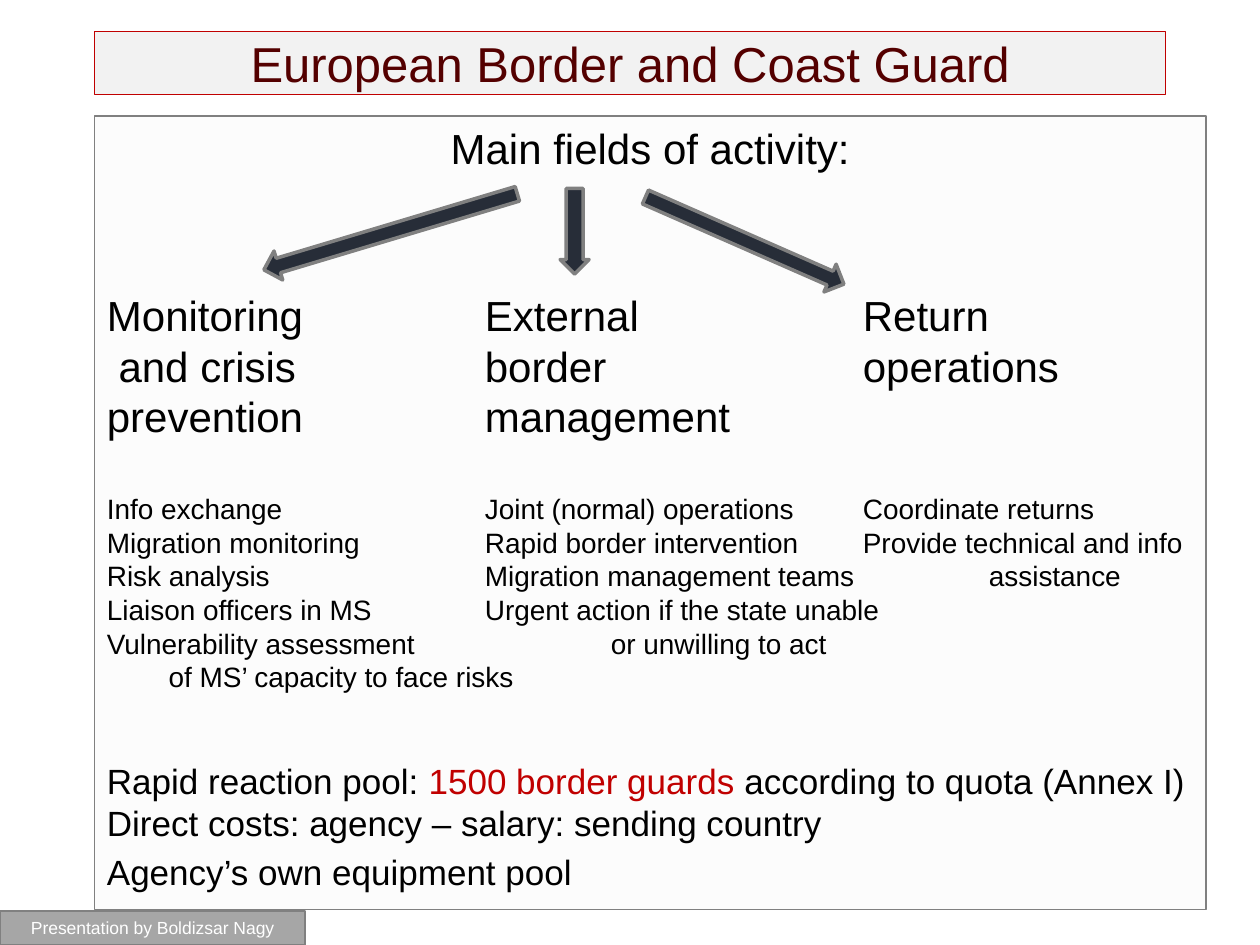
import pptx
import pptx.util
import pptx.dml.color
import pptx.enum.shapes
import pptx.enum.text
import pptx.oxml
import pptx.oxml.ns

Inches, Pt = pptx.util.Inches, pptx.util.Pt
SHAPES = pptx.enum.shapes.MSO_SHAPE
ALIGN = pptx.enum.text.PP_ALIGN
ANCHOR = pptx.enum.text.MSO_ANCHOR
NAMESPACE = pptx.oxml.ns.nsdecls("a")

# Each row: text, tab stops in inches
HEADINGS = [
    ("Monitoring\tExternal\tReturn", (3, 6)),
    (" and crisis\tborder\toperations", (3, 6)),
    ("prevention\tmanagement", (3,)),
]
TASKS = [
    ("Info exchange\tJoint (normal) operations\tCoordinate returns", (3, 6)),
    ("Migration monitoring\tRapid border intervention\tProvide technical and info", (3, 6)),
    ("Risk analysis\tMigration management teams\tassistance", (3, 7)),
    ("Liaison officers in MS\tUrgent action if the state unable", (3,)),
    ("Vulnerability assessment\tor unwilling to act", (4,)),
]
# Each arrow: left, top, width, height, rotation, shaft thickness
ARROWS = [
    (2.05, 1.72, 2.1, 0.24, 163.3, 0.5),
    (4.22, 1.72, 0.68, 0.23, 90, 0.58),
    (5.05, 1.79, 1.72, 0.24, 23.7, 0.5),
]


def colour(value):
    return pptx.dml.color.RGBColor.from_string(value)


def apply(target, values):
    for name, value in values.items():
        setattr(target, name, value)


def place(shape, box):
    names = ("left", "top", "width", "height")
    apply(shape, dict(zip(names, map(Inches, box))))


def paint(shape, fill, line, width):
    shape.shadow.inherit = False
    shape.fill.solid()
    shape.fill.fore_color.rgb = colour(fill)
    shape.line.color.rgb = colour(line)
    shape.line.width = Pt(width)


def add_span(para, text, size, ink="000000"):
    span = para.add_run()
    span.text = text
    apply(span.font, {"name": "Arial", "size": Pt(size)})
    span.font.color.rgb = colour(ink)


def add_line(frame, spans, size, before=0, align=ALIGN.LEFT, stops=(), indent=0):
    """Add one paragraph made of (text, colour) spans."""
    para = frame.paragraphs[0]
    if para.runs:
        para = frame.add_paragraph()
    apply(para, {"alignment": align, "space_before": Pt(before),
                 "space_after": Pt(0), "line_spacing": Pt(1.2 * size)})
    properties = para._p.get_or_add_pPr()
    if indent:
        properties.set("marL", str(Inches(indent)))
    if stops:
        tabs = "".join(f'<a:tab pos="{Inches(stop)}" algn="l"/>' for stop in stops)
        properties.append(pptx.oxml.parse_xml(f"<a:tabLst {NAMESPACE}>{tabs}</a:tabLst>"))
    for text, ink in spans:
        add_span(para, text, size, ink)


def fill_label(shape, text, size, ink):
    apply(shape.text_frame, {"word_wrap": True, "vertical_anchor": ANCHOR.MIDDLE,
                             "margin_top": 0, "margin_bottom": 0})
    para = shape.text_frame.paragraphs[0]
    para.alignment = ALIGN.CENTER
    add_span(para, text, size, ink)


def add_footer(page, box):
    footer = page.shapes.add_shape(SHAPES.RECTANGLE, *map(Inches, box))
    paint(footer, "A6A6A6", "808080", 0.75)
    fill_label(footer, "Presentation by Boldizsar Nagy", 10, "FFFFFF")


def set_title(page, box):
    title = page.shapes.title
    place(title, box)
    paint(title, "F2F2F2", "C00000", 0.75)
    fill_label(title, "European Border and Coast Guard", 28, "540000")


def add_body(page, box):
    body = page.shapes.add_shape(SHAPES.RECTANGLE, *map(Inches, box))
    paint(body, "F2F2F2", "808080", 1)
    tint = body._element.spPr.find(".//" + pptx.oxml.ns.qn("a:srgbClr"))
    tint.append(pptx.oxml.parse_xml(f'<a:alpha {NAMESPACE} val="20000"/>'))
    frame = body.text_frame
    apply(frame, {"word_wrap": True, "vertical_anchor": ANCHOR.TOP})

    add_line(frame, [("Main fields of activity:", "000000")], 24, align=ALIGN.CENTER)

    # Three columns held by tab stops
    for rows, size, gap in ((HEADINGS, 24, 67), (TASKS, 16, 29)):
        for number, (text, stops) in enumerate(rows):
            add_line(frame, [(text, "000000")], size, 0 if number else gap, stops=stops)
    add_line(frame, [("of MS’ capacity to face risks", "000000")], 16, indent=0.49)

    # Resources
    add_line(frame, [("Rapid reaction pool: ", "000000"),
                     ("1500 border guards ", "C00000"),
                     ("according to quota (Annex I)", "000000")], 20, 38)
    add_line(frame, [("Direct costs: agency – salary: sending country", "000000")], 20)
    add_line(frame, [("Agency’s own equipment pool", "000000")], 20, 4)


def add_arrow(page, box, rotation, shaft):
    arrow = page.shapes.add_shape(SHAPES.RIGHT_ARROW, *map(Inches, box))
    paint(arrow, "272D38", "808080", 2)
    arrow.rotation = rotation
    arrow.adjustments[0] = shaft


def main():
    deck = pptx.Presentation()
    apply(deck, {"slide_width": Inches(10), "slide_height": Inches(7.5)})
    page = deck.slides.add_slide(deck.slide_layouts[5])
    add_footer(page, (0, 7.23, 2.42, 0.27))
    set_title(page, (0.75, 0.25, 8.5, 0.5))
    add_body(page, (0.75, 0.92, 8.82, 6.3))
    for *box, rotation, shaft in ARROWS:
        add_arrow(page, box, rotation, shaft)
    deck.save("out.pptx")


if __name__ == "__main__":
    main()
